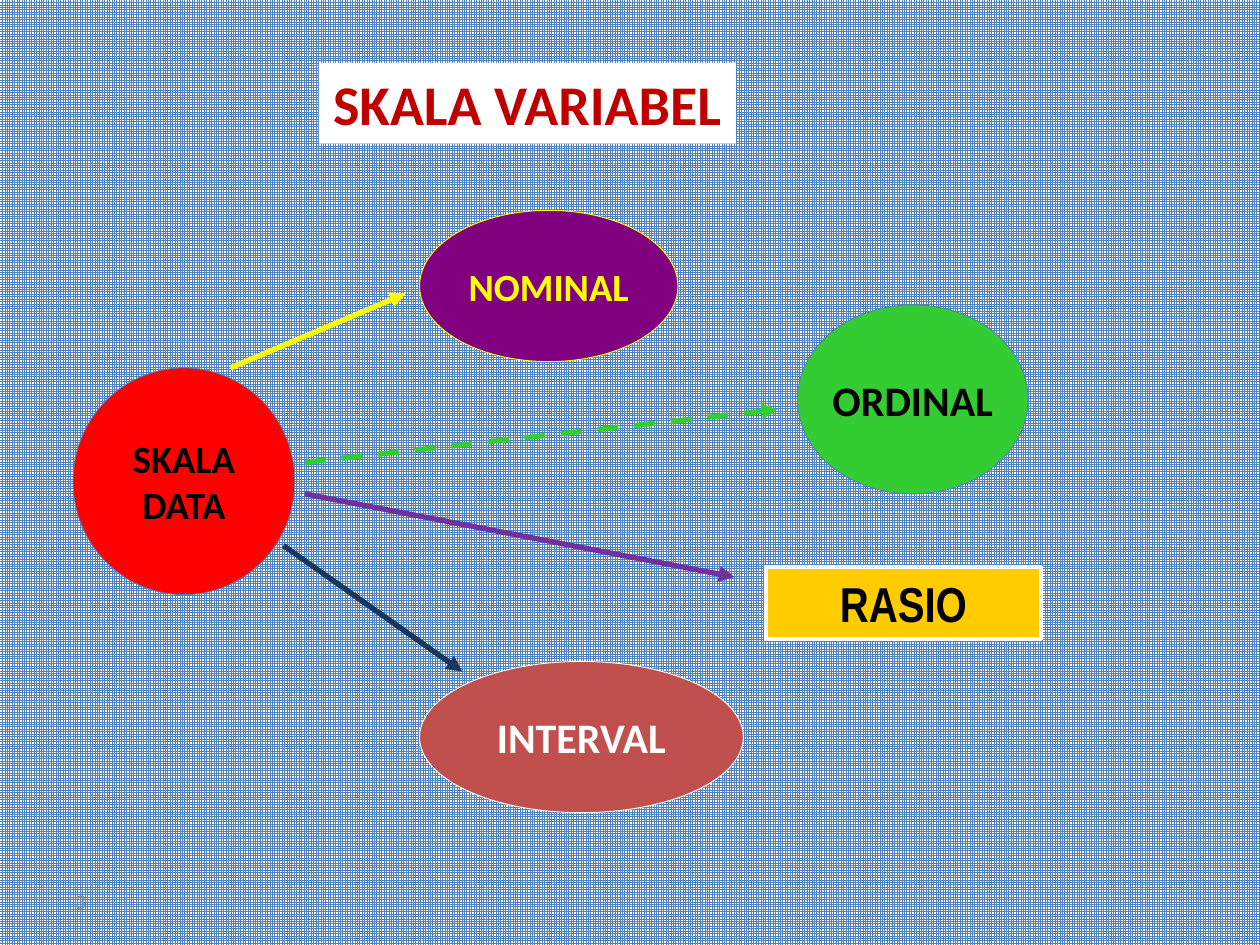
"""Build the SKALA VARIABEL slide with its four measurement scales."""
from lxml.etree import SubElement
from pptx import Presentation
from pptx.dml.color import RGBColor
from pptx.enum.dml import MSO_LINE, MSO_PATTERN
from pptx.enum.shapes import MSO_CONNECTOR, MSO_SHAPE
from pptx.enum.text import MSO_ANCHOR, PP_ALIGN
from pptx.oxml.ns import qn
from pptx.util import Inches, Pt

BLUE = RGBColor(0x4F, 0x81, 0xBD)
WHITE = RGBColor(0xFF, 0xFF, 0xFF)
BLACK = RGBColor(0x00, 0x00, 0x00)
GRAY = RGBColor(0x8C, 0x8C, 0x8C)
YELLOW = RGBColor(0xFF, 0xFF, 0x00)
PURPLE = RGBColor(0x80, 0x00, 0x80)
VIOLET = RGBColor(0x70, 0x30, 0xA0)
BRICK = RGBColor(0xC0, 0x50, 0x4D)
GREEN = RGBColor(0x33, 0xCC, 0x33)
RED = RGBColor(0xFF, 0x00, 0x00)
DARK_RED = RGBColor(0xC0, 0x00, 0x00)
NAVY = RGBColor(0x17, 0x37, 0x5E)
GOLD = RGBColor(0xFF, 0xCC, 0x00)


def write(tf, lines, size, color, font="Calibri", bold=True, align=PP_ALIGN.CENTER):
    tf.vertical_anchor = MSO_ANCHOR.MIDDLE
    for i, line in enumerate(lines):
        p = tf.add_paragraph() if i else tf.paragraphs[0]
        p.text = line
        p.alignment = align
        p.font.name = font
        p.font.size = Pt(size)
        p.font.bold = bold
        p.font.color.rgb = color


prs = Presentation()
prs.slide_width, prs.slide_height = Inches(10), Inches(7.5)
s = prs.slides.add_slide(prs.slide_layouts[6])

fill = s.background.fill
fill.patterned()
fill.pattern = MSO_PATTERN.SMALL_GRID
fill.fore_color.rgb = BLUE
fill.back_color.rgb = WHITE

tb = s.shapes.add_textbox(Inches(0.5), Inches(6.95), Inches(2.33), Inches(0.4))
tb.text_frame.word_wrap = True
write(tb.text_frame, ["3"], 12, GRAY, bold=False, align=PP_ALIGN.LEFT)

arrows = [
    (2.42, 3.67, 6.17, 3.25, GREEN, MSO_LINE.DASH),
    (1.83, 2.92, 3.22, 2.33, YELLOW, None),
    (2.25, 4.33, 3.67, 5.33, NAVY, None),
    (2.42, 3.92, 5.83, 4.58, VIOLET, None),
]
for x1, y1, x2, y2, color, dash in arrows:
    c = s.shapes.add_connector(
        MSO_CONNECTOR.STRAIGHT, Inches(x1), Inches(y1), Inches(x2), Inches(y2))
    c.line.color.rgb = color
    c.line.width = Pt(3)
    if dash:
        c.line.dash_style = dash
    SubElement(c.line._get_or_add_ln(), qn("a:tailEnd"), type="triangle")
    SubElement(c._element.spPr, qn("a:effectLst"))

OVAL, RECT = MSO_SHAPE.OVAL, MSO_SHAPE.RECTANGLE
nodes = [
    (OVAL, 3.33, 1.67, 2.05, 1.2, PURPLE, YELLOW, 0.5, ["NOMINAL"], 22, YELLOW, "Calibri"),
    (OVAL, 3.33, 5.25, 2.57, 1.2, BRICK, WHITE, 0.5, ["INTERVAL"], 24, WHITE, "Calibri"),
    (OVAL, 6.33, 2.42, 1.83, 1.5, GREEN, BLUE, 0.5, ["ORDINAL"], 24, BLACK, "Calibri"),
    (OVAL, 0.58, 2.92, 1.76, 1.8, RED, BLUE, 0.5, ["SKALA", "DATA"], 22, BLACK, "Calibri"),
    (RECT, 2.53, 0.5, 3.31, 0.64, WHITE, None, 0, ["SKALA VARIABEL"], 32, DARK_RED, "Calibri"),
    (RECT, 6.08, 4.5, 2.18, 0.57, GOLD, WHITE, 2.25, ["RASIO"], 28, BLACK, "Arial Narrow"),
]
for kind, x, y, w, h, back, edge, width, lines, size, color, font in nodes:
    sp = s.shapes.add_shape(kind, Inches(x), Inches(y), Inches(w), Inches(h))
    sp.shadow.inherit = False
    sp.fill.solid()
    sp.fill.fore_color.rgb = back
    if edge is None:
        sp.line.fill.background()
    else:
        sp.line.color.rgb = edge
        sp.line.width = Pt(width)
    sp.text_frame.word_wrap = False
    write(sp.text_frame, lines, size, color, font)

prs.save("out.pptx")
